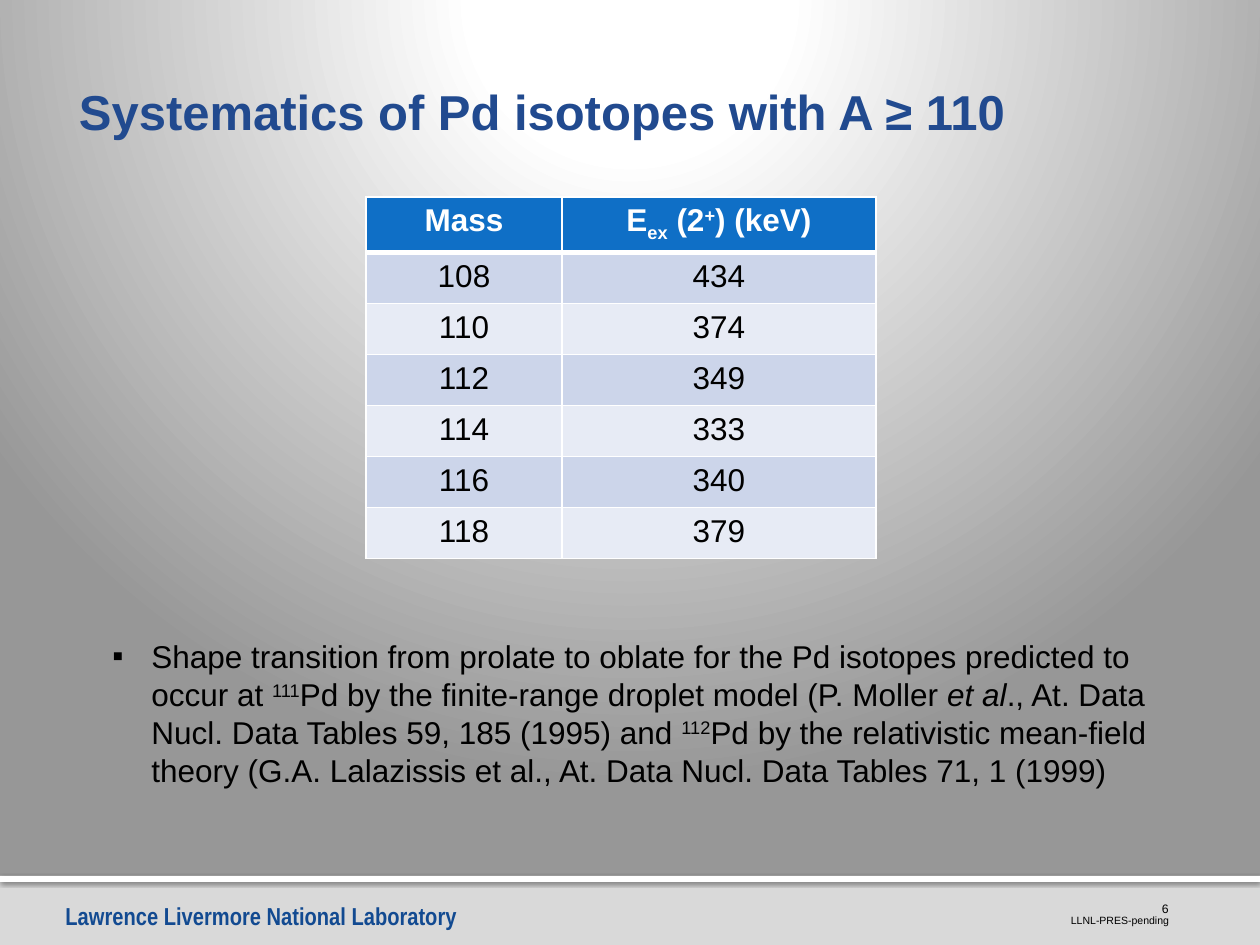
from pptx import Presentation
from pptx.dml.color import RGBColor
from pptx.enum.shapes import MSO_SHAPE
from pptx.enum.text import MSO_ANCHOR, MSO_AUTO_SIZE, PP_ALIGN
from pptx.oxml import parse_xml
from pptx.oxml.ns import nsdecls
from pptx.util import Pt

PX = 914400 / 126
RECTANGLE = MSO_SHAPE.RECTANGLE
BOTTOM = MSO_ANCHOR.BOTTOM
NO_AUTOFIT = MSO_AUTO_SIZE.NONE
LEFT, CENTER, RIGHT = PP_ALIGN.LEFT, PP_ALIGN.CENTER, PP_ALIGN.RIGHT

BLACK = RGBColor(0x00, 0x00, 0x00)
WHITE = RGBColor(0xFF, 0xFF, 0xFF)
FOOTER_GRAY = RGBColor(0xD9, 0xD9, 0xD9)
FOOTER_BLUE = RGBColor(0x12, 0x4A, 0x91)
TITLE_BLUE = RGBColor(0x21, 0x4A, 0x8F)
HEADER_BLUE = RGBColor(0x0F, 0x6F, 0xC6)
BANDS = (RGBColor(0xE7, 0xEB, 0xF5), RGBColor(0xCC, 0xD5, 0xEA))

SUPER, SUB = {"baseline": "30000"}, {"baseline": "-25000"}
ITALIC = {"i": "1"}

HEADINGS = (
    [("Mass", {})],
    [("E", {}), ("ex", SUB), (" (2", {}), ("+", SUPER), (") (keV)", {})],
)
ENERGIES = {108: 434, 110: 374, 112: 349, 114: 333, 116: 340, 118: 379}
FINDING = [
    ("Shape transition from prolate to oblate for the Pd isotopes predicted to occur at ", {}),
    ("111", SUPER),
    ("Pd by the finite-range droplet model (P. Moller ", {}),
    ("et al", ITALIC),
    ("., At. Data Nucl. Data Tables 59, 185 (1995) and ", {}),
    ("112", SUPER),
    ("Pd by the relativistic mean-field theory (G.A. Lalazissis et al., "
     "At. Data Nucl. Data Tables 71, 1 (1999)", {}),
]


def px(*lengths):
    """Turn px lengths into EMU."""
    return [round(length * PX) for length in lengths]


def set_background(page):
    page.background.fill.solid()
    stops = "".join(
        f'<a:gs pos="{pos * 1000}"><a:srgbClr val="{color}"/></a:gs>'
        for pos, color in ((0, WHITE), (12, WHITE), (20, WHITE), (100, "979797")))
    gradient = parse_xml(
        f'<a:gradFill {nsdecls("a")} rotWithShape="1"><a:gsLst>{stops}</a:gsLst>'
        '<a:path path="circle"><a:fillToRect l="10000" t="-25000" r="10000" b="125000"/>'
        '</a:path></a:gradFill>')
    solid = page.element.xpath(".//p:bgPr/a:solidFill")[0]
    solid.getparent().replace(solid, gradient)


def write(para, spans, size, color, font="Arial", bold=False, align=LEFT):
    """Fill a paragraph with (text, run attributes) spans in one font."""
    for text, attributes in spans:
        span = para.add_run()
        span.text = text
        properties = span._r.get_or_add_rPr()
        for name, value in attributes.items():
            properties.set(name, value)
    para.alignment = align
    para.font.name = font
    para.font.size = Pt(size)
    para.font.bold = bold
    para.font.color.rgb = color


def add_text(page, place, spans, size, color, wrap=True, **style):
    box = page.shapes.add_textbox(*px(*place))
    box.text_frame.word_wrap = wrap
    write(box.text_frame.paragraphs[0], spans, size, color, **style)
    return box


def set_insets(frame, left, top, right, bottom):
    frame.margin_left, frame.margin_top, frame.margin_right, frame.margin_bottom = px(
        left, top, right, bottom)


def add_band(page, height, color, alpha, blur, distance):
    """Add a full-width footer band with a shadow below it."""
    band = page.shapes.add_shape(RECTANGLE, *px(0, 876, 1260, height))
    band.fill.solid()
    band.fill.fore_color.rgb = color
    band.line.fill.background()
    band.shadow.inherit = False
    band.element.xpath("./p:spPr/a:effectLst")[0].append(parse_xml(
        f'<a:outerShdw {nsdecls("a")} blurRad="{Pt(blur)}" dist="{Pt(distance)}" '
        f'dir="5400000" rotWithShape="0"><a:srgbClr val="{BLACK}">'
        f'<a:alpha val="{alpha * 1000}"/></a:srgbClr></a:outerShdw>'))


def add_footer(page):
    add_band(page, 69, FOOTER_GRAY, 38, 3.1, 2)
    add_band(page, 6, WHITE, 60, 2.5, 0.8)
    add_text(page, (53, 895, 421, 43), [("Lawrence Livermore National Laboratory", {})],
             14, FOOTER_BLUE, font="Arial Narrow", bold=True)
    release = add_text(page, (1070, 908, 112, 19), [("LLNL-PRES-pending", {})],
                       6, BLACK, wrap=False, align=RIGHT)
    release.text_frame.vertical_anchor = BOTTOM
    set_insets(release.text_frame, 0, 6, 13, 0)
    add_text(page, (1132, 895, 49, 21), [("6", {})], 7, BLACK, align=RIGHT)


def set_title(page, text):
    title = page.shapes.title
    title.left, title.top, title.width, title.height = px(66, 60, 1131, 86)
    frame = title.text_frame
    frame.auto_size = NO_AUTOFIT
    frame.vertical_anchor = BOTTOM
    set_insets(frame, 13, 6, 6, 6)
    para = frame.paragraphs[0]
    write(para, [(text, {})], 28, TITLE_BLUE, bold=True)
    para.line_spacing = Pt(38)


def format_cell(cell, spans, fill, color, bold, top, bottom):
    """Write a centred cell; top and bottom are border widths in points."""
    write(cell.text_frame.paragraphs[0], spans, 18, color, bold=bold, align=CENTER)
    properties = cell._tc.get_or_add_tcPr()
    for side, width in (("L", 1), ("R", 1), ("T", top), ("B", bottom)):
        properties.append(parse_xml(
            f'<a:ln{side} {nsdecls("a")} w="{Pt(width)}"><a:solidFill>'
            f'<a:srgbClr val="{WHITE}"/></a:solidFill></a:ln{side}>'))
    cell.fill.solid()
    cell.fill.fore_color.rgb = fill


def add_energy_table(page):
    body = [[[(str(value), {})] for value in pair] for pair in ENERGIES.items()]
    rows = [HEADINGS, *body]
    widths, row_height = (196, 314), 51
    table = page.shapes.add_table(
        len(rows), len(widths),
        *px(366, 197, sum(widths), row_height * len(rows))).table
    table.horz_banding = False
    for column, width in zip(table.columns, px(*widths)):
        column.width = width
    for index, row in enumerate(rows):
        table.rows[index].height = px(row_height)[0]
        header = index == 0
        for column, spans in enumerate(row):
            format_cell(table.cell(index, column), spans,
                        fill=HEADER_BLUE if header else BANDS[index % 2],
                        color=WHITE if header else BLACK, bold=header,
                        top=3 if index == 1 else 1, bottom=3 if header else 1)


def add_finding(page):
    box = page.shapes.add_textbox(*px(100, 631, 1063, 165))
    box.text_frame.word_wrap = True
    para = box.text_frame.paragraphs[0]
    properties = para._p.get_or_add_pPr()
    indent = px(39)[0]
    properties.set("marL", str(indent))
    properties.set("indent", str(-indent))
    properties.append(parse_xml(f'<a:buFont {nsdecls("a")} typeface="Arial"/>'))
    properties.append(parse_xml(f'<a:buChar {nsdecls("a")} char="▪"/>'))
    write(para, FINDING, 18, BLACK)


def main():
    deck = Presentation()
    deck.slide_width, deck.slide_height = px(1260, 945)
    page = deck.slides.add_slide(deck.slide_layouts[5])
    set_background(page)
    add_footer(page)
    set_title(page, "Systematics of Pd isotopes with A ≥ 110")
    add_energy_table(page)
    add_finding(page)
    deck.save("out.pptx")


if __name__ == "__main__":
    main()
